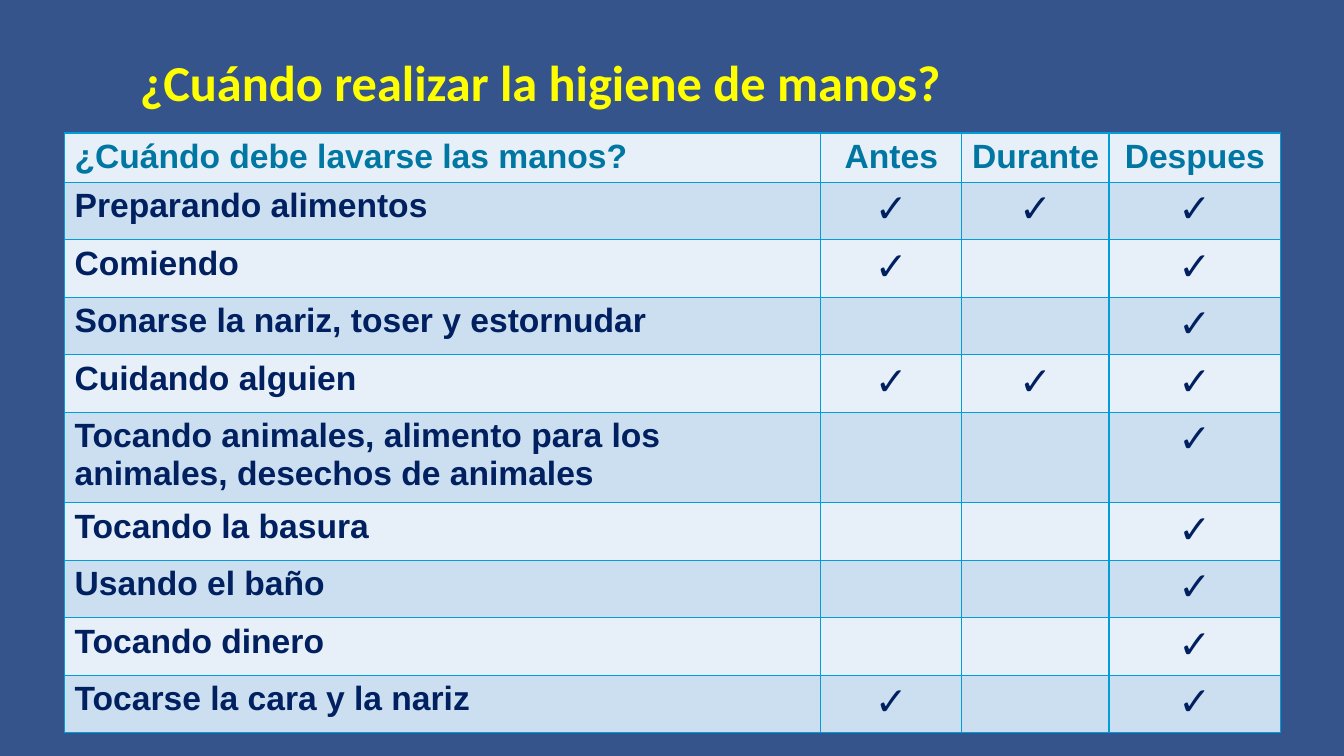
from lxml import etree
from pptx import Presentation
from pptx import util as u
from pptx.dml.color import RGBColor
from pptx.enum import text
from pptx.oxml import ns

HEADINGS = ["¿Cuándo debe lavarse las manos?", "Antes", "Durante", "Despues"]
MOMENTS = [
    ("Preparando alimentos", "✓", "✓", "✓"),
    ("Comiendo", "✓", "", "✓"),
    ("Sonarse la nariz, toser y estornudar", "", "", "✓"),
    ("Cuidando alguien", "✓", "✓", "✓"),
    ("Tocando animales, alimento para los animales, desechos de animales", "", "", "✓"),
    ("Tocando la basura", "", "", "✓"),
    ("Usando el baño", "", "", "✓"),
    ("Tocando dinero", "", "", "✓"),
    ("Tocarse la cara y la nariz", "✓", "", "✓"),
]
COLUMN_WIDTHS = [7.5, 1.4, 1.46, 1.7]
HEADER_HEIGHT, ROW_HEIGHT, LONG_ROW_HEIGHT = 0.49, 0.57, 0.9


def rgb(value):
    return RGBColor.from_string(value)


class HygieneSlide:
    background = "36548C"
    title_color = "FFFF00"
    heading_color = "0076A3"
    body_color = "002060"
    border_color = "009DD9"
    bands = ("E7EFF8", "CCDFF1")

    def __init__(self, presentation):
        self.slide = presentation.slides.add_slide(presentation.slide_layouts[6])
        fill = self.slide.background.fill
        fill.solid()
        fill.fore_color.rgb = rgb(self.background)

    def style(self, paragraph, font_name, size, color):
        font = paragraph.font
        font.name = font_name
        font.size = u.Pt(size)
        font.bold = True
        font.color.rgb = rgb(color)

    def title(self, wording, left, top, width, height):
        box = self.slide.shapes.add_textbox(
            u.Inches(left), u.Inches(top), u.Inches(width), u.Inches(height))
        box.text_frame.word_wrap = True
        paragraph = box.text_frame.paragraphs[0]
        paragraph.text = wording
        self.style(paragraph, "Calibri", 36, self.title_color)

    def border(self, cell):
        properties = cell._tc.get_or_add_tcPr()
        for position, side in enumerate(("lnL", "lnR", "lnT", "lnB")):
            line = etree.Element(ns.qn(f"a:{side}"), w=str(u.Pt(1)))
            solid = etree.SubElement(line, ns.qn("a:solidFill"))
            etree.SubElement(solid, ns.qn("a:srgbClr"), val=self.border_color)
            properties.insert(position, line)

    def cell(self, cell, wording, row, column):
        cell.fill.solid()
        cell.fill.fore_color.rgb = rgb(self.bands[row % 2])
        self.border(cell)
        paragraph = cell.text_frame.paragraphs[0]
        if column:
            paragraph.alignment = text.PP_ALIGN.CENTER
        if wording:
            paragraph.text = wording
            self.style(paragraph, "Arial", 28 if wording == "✓" else 24,
                       self.body_color if row else self.heading_color)

    def table(self, rows, left, top, widths, heights):
        table = self.slide.shapes.add_table(
            len(rows), len(widths), u.Inches(left), u.Inches(top),
            u.Inches(sum(widths)), u.Inches(sum(heights))).table
        for column, width in zip(table.columns, widths):
            column.width = u.Inches(width)
        for row, height in zip(table.rows, heights):
            row.height = u.Inches(height)
        for row, wordings in enumerate(rows):
            for column, wording in enumerate(wordings):
                self.cell(table.cell(row, column), wording, row, column)


def main():
    presentation = Presentation()
    presentation.slide_width = u.Inches(13.33)
    presentation.slide_height = u.Inches(7.5)
    hygiene = HygieneSlide(presentation)
    heights = [HEADER_HEIGHT] + [
        LONG_ROW_HEIGHT if len(moment[0]) > 40 else ROW_HEIGHT for moment in MOMENTS]
    hygiene.table([HEADINGS, *MOMENTS], 0.64, 1.32, COLUMN_WIDTHS, heights)
    hygiene.title("¿Cuándo realizar la higiene de manos?", 1.29, 0.46, 10.53, 0.71)
    presentation.save("out.pptx")


if __name__ == "__main__":
    main()
